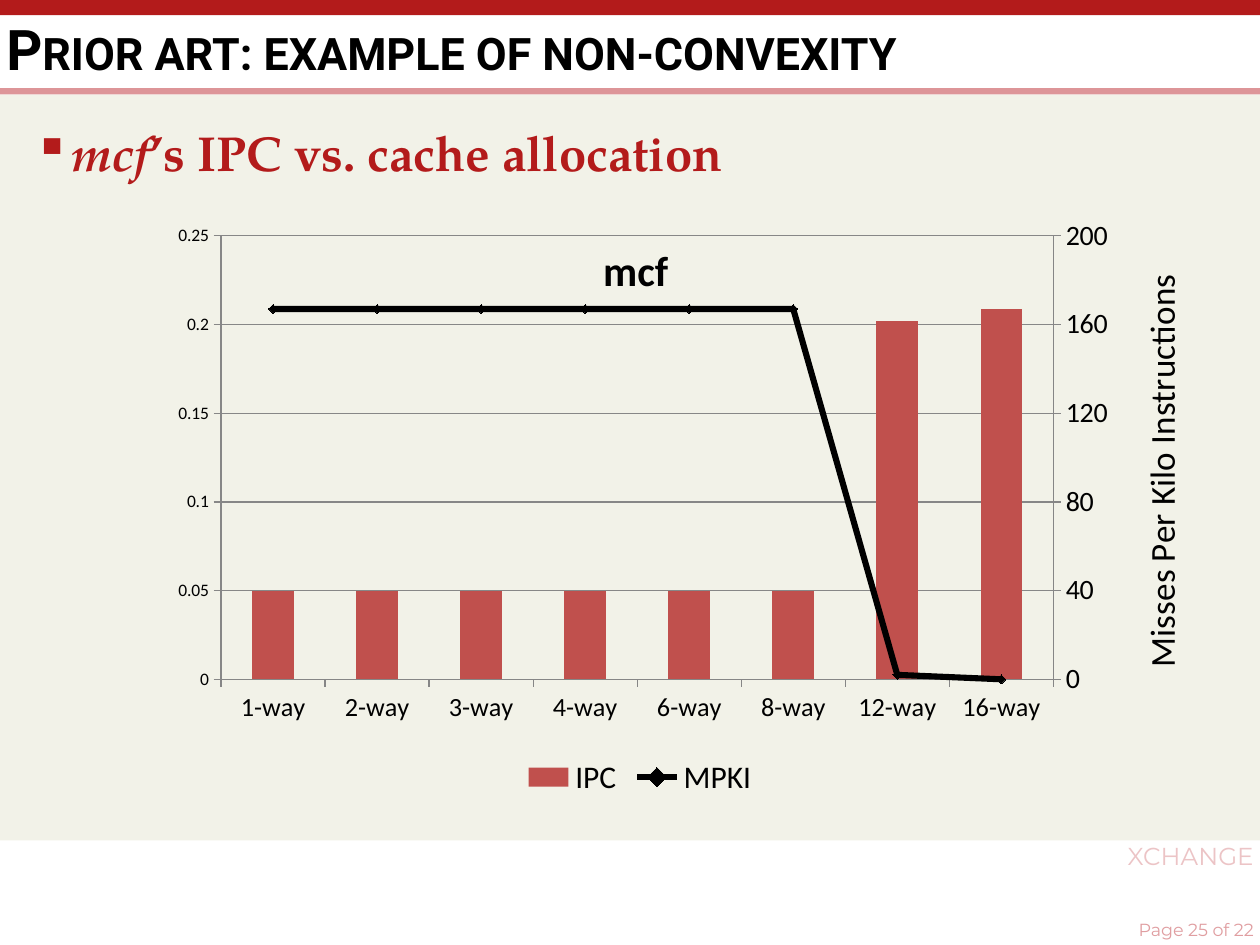
from copy import deepcopy

from lxml import etree
from pptx import Presentation
from pptx.chart import axis as ax
from pptx.chart.data import CategoryChartData
from pptx.dml.color import RGBColor
from pptx.enum import chart as ch, shapes, text
from pptx.oxml import parse_xml
from pptx.oxml.ns import nsdecls, qn
from pptx.util import Inches, Pt

RED = RGBColor(0xB3, 0x1B, 0x1B)
ROSE = RGBColor(0xDD, 0x95, 0x98)
CREAM = RGBColor(0xF2, 0xF2, 0xE8)
BLACK = RGBColor(0, 0, 0)
GREY = RGBColor(0x86, 0x86, 0x86)
BAR = RGBColor(0xC0, 0x50, 0x4D)
PALE = RGBColor(0xEC, 0xC4, 0xC6)
PINK = RGBColor(0xE0, 0x9E, 0xA1)

WAYS = (1, 2, 3, 4, 6, 8, 12, 16)
IPC = [0.05] * 6 + [0.202, 0.209]
MPKI = [167] * 6 + [2, 0]


def set_font(font, color=BLACK, **values):
    """Apply a colour and a dict of format values to a font."""
    for name, value in values.items():
        setattr(font, name, value)
    font.color.rgb = color


def set_frame(tf, **values):
    """Apply a dict of format values to a text frame."""
    for name, value in values.items():
        setattr(tf, name, value)


def add_band(s, box, color):
    """Draw a plain filled rectangle."""
    sp = s.shapes.add_shape(shapes.MSO_SHAPE.RECTANGLE, *map(Inches, box))
    sp.shadow.inherit = False
    sp.fill.solid()
    sp.fill.fore_color.rgb = color
    sp.line.fill.background()


def add_title(s, box, words):
    """Place and format the title placeholder."""
    sp = s.shapes.title
    sp.left, sp.top, sp.width, sp.height = map(Inches, box)
    tf = sp.text_frame
    set_frame(tf, word_wrap=True, auto_size=text.MSO_AUTO_SIZE.NONE,
              vertical_anchor=text.MSO_ANCHOR.MIDDLE, margin_left=Inches(0.05),
              margin_right=Inches(0.05), margin_top=0, margin_bottom=Inches(0.05))
    p = tf.paragraphs[0]
    p.alignment = text.PP_ALIGN.LEFT
    r = p.add_run()
    r.text = words
    set_font(r.font, name="Roboto", size=Pt(32), bold=True)
    r.font._element.set("cap", "small")


def add_bullet(s, box, parts):
    """Write one bulleted line from (words, italic) parts."""
    tf = s.shapes.add_textbox(*map(Inches, box)).text_frame
    tf.word_wrap = True
    p = tf.paragraphs[0]
    pPr = p._p.get_or_add_pPr()
    pPr.set("marL", str(Inches(0.3)))
    pPr.set("indent", str(-Inches(0.3)))
    etree.SubElement(pPr, qn("a:buChar")).set("char", "▪")
    for words, italic in parts:
        r = p.add_run()
        r.text = words
        set_font(r.font, RED, name="TeX Gyre Pagella", size=Pt(28), bold=True, italic=italic)


def add_footer(s, box, words, size, color):
    """Write a right-aligned footer line."""
    tf = s.shapes.add_textbox(*map(Inches, box)).text_frame
    set_frame(tf, word_wrap=True, vertical_anchor=text.MSO_ANCHOR.MIDDLE,
              margin_left=Inches(0.05), margin_right=Inches(0.05), margin_top=0, margin_bottom=0)
    p = tf.paragraphs[0]
    p.alignment = text.PP_ALIGN.RIGHT
    r = p.add_run()
    r.text = words
    set_font(r.font, color, name="Montserrat", size=Pt(size))


def set_layout(parent, index, **values):
    """Give a chart part a manual layout."""
    for old in parent.findall(qn("c:layout")):
        parent.remove(old)
    layout = parse_xml(f'<c:layout {nsdecls("c")}><c:manualLayout/></c:layout>')
    for name, value in values.items():
        etree.SubElement(layout[0], qn(f"c:{name}")).set("val", str(value))
    parent.insert(index, layout)


def move_to_right_axis(chart):
    """Turn the second series into a line on its own axes; return its value axis."""
    area = chart._chartSpace.chart.plotArea
    bars = area.find(qn("c:barChart"))
    ser = bars.findall(qn("c:ser"))[1]
    for tag in ser.findall(qn("c:invertIfNegative")):
        ser.remove(tag)
    line = parse_xml(f'<c:lineChart {nsdecls("c")}><c:grouping val="standard"/>'
                     '<c:varyColors val="0"/><c:marker val="1"/>'
                     '<c:axId val="5001"/><c:axId val="5002"/></c:lineChart>')
    line.insert(2, ser)
    bars.addnext(line)
    cat, val = deepcopy(area.find(qn("c:catAx"))), deepcopy(area.find(qn("c:valAx")))
    for el, own, other in ((cat, "5001", "5002"), (val, "5002", "5001")):
        el.find(qn("c:axId")).set("val", own)
        el.find(qn("c:crossAx")).set("val", other)
    val.find(qn("c:axPos")).set("val", "r")
    val.find(qn("c:crosses")).set("val", "max")
    area.findall(qn("c:valAx"))[-1].addnext(val)
    val.addnext(cat)
    ax.CategoryAxis(cat).visible = False
    return ax.ValueAxis(val)


def style_axis(axis, size, title=None, top=None, step=None):
    """Format an axis, with title and scale where given."""
    axis.major_tick_mark = ch.XL_TICK_MARK.OUTSIDE
    axis.format.line.color.rgb = GREY
    set_font(axis.tick_labels.font, size=Pt(size))
    if title:
        axis.minimum_scale, axis.maximum_scale, axis.major_unit = 0, top, step
        tf = axis.axis_title.text_frame
        tf.text = title
        set_font(tf.paragraphs[0].runs[0].font, size=Pt(20), bold=False)
        tf._txBody.bodyPr.set("rot", "-5400000")
        tf._txBody.bodyPr.set("vert", "horz")


def add_cache_chart(s, box):
    """Draw IPC columns with the MPKI line on a right axis."""
    data = CategoryChartData()
    data.categories = [f"{n}-way" for n in WAYS]
    data.add_series("IPC", IPC)
    data.add_series("MPKI", MPKI)
    chart = s.shapes.add_chart(ch.XL_CHART_TYPE.COLUMN_CLUSTERED, *map(Inches, box), data).chart
    set_font(chart.font, name="Calibri", size=Pt(10))
    right = move_to_right_axis(chart)
    style_axis(chart.category_axis, 15)
    style_axis(chart.value_axis, 16, "IPC", 0.25, 0.05)
    style_axis(right, 16, "Misses Per Kilo Instructions", 200, 40)
    right.has_major_gridlines = False
    chart.value_axis.major_gridlines.format.line.color.rgb = GREY

    bars, lines = chart.plots
    bars.gap_width = 150
    bars.vary_by_categories = False
    fill = bars.series[0].format.fill
    fill.solid()
    fill.fore_color.rgb = BAR
    mpki = lines.series[0]
    mpki.smooth = False
    mpki.format.line.color.rgb = BLACK
    mpki.format.line.width = Pt(3.5)
    mpki.marker.style, mpki.marker.size = ch.XL_MARKER_STYLE.DIAMOND, 5
    mpki.marker.format.fill.solid()
    mpki.marker.format.fill.fore_color.rgb = BLACK
    mpki.marker.format.line.color.rgb = BLACK

    chart.has_title = True
    tf = chart.chart_title.text_frame
    tf.text = "mcf"
    set_font(tf.paragraphs[0].runs[0].font, size=Pt(24), bold=True)
    title = chart.chart_title._element
    title.find(qn("c:overlay")).set("val", "1")
    set_layout(title, 1, xMode="edge", yMode="edge", x=0.46, y=0.04)
    set_layout(chart._chartSpace.chart.plotArea, 0, layoutTarget="inner", xMode="edge",
               yMode="edge", x=0.123, y=0.043, w=0.749, h=0.749)
    chart.has_legend = True
    chart.legend.position = ch.XL_LEGEND_POSITION.BOTTOM
    chart.legend.include_in_layout = False
    set_font(chart.legend.font, size=Pt(18))


def main():
    """Build the slide and save it."""
    prs = Presentation()
    prs.slide_width, prs.slide_height = Inches(10), Inches(7.5)
    s = prs.slides.add_slide(prs.slide_layouts[5])
    for box, color in (((0, 0.75, 10, 5.92), CREAM), ((0, 0, 10, 0.12), RED),
                       ((0, 0.7, 10, 0.05), ROSE)):
        add_band(s, box, color)
    add_title(s, (0, 0.2, 8.75, 0.42), "Prior art: example of non-convexity")
    add_bullet(s, (0.17, 0.92, 9.67, 0.75),
               (("mcf", True), ("’s IPC vs. cache allocation", False)))
    add_footer(s, (3.25, 6.67, 6.75, 0.25), "XCHANGE", 14, PALE)
    add_footer(s, (8.5, 7.25, 1.5, 0.25), "Page 25 of 22", 10, PINK)
    add_cache_chart(s, (0.67, 1.67, 8.82, 4.7))
    prs.save("out.pptx")


if __name__ == "__main__":
    main()
